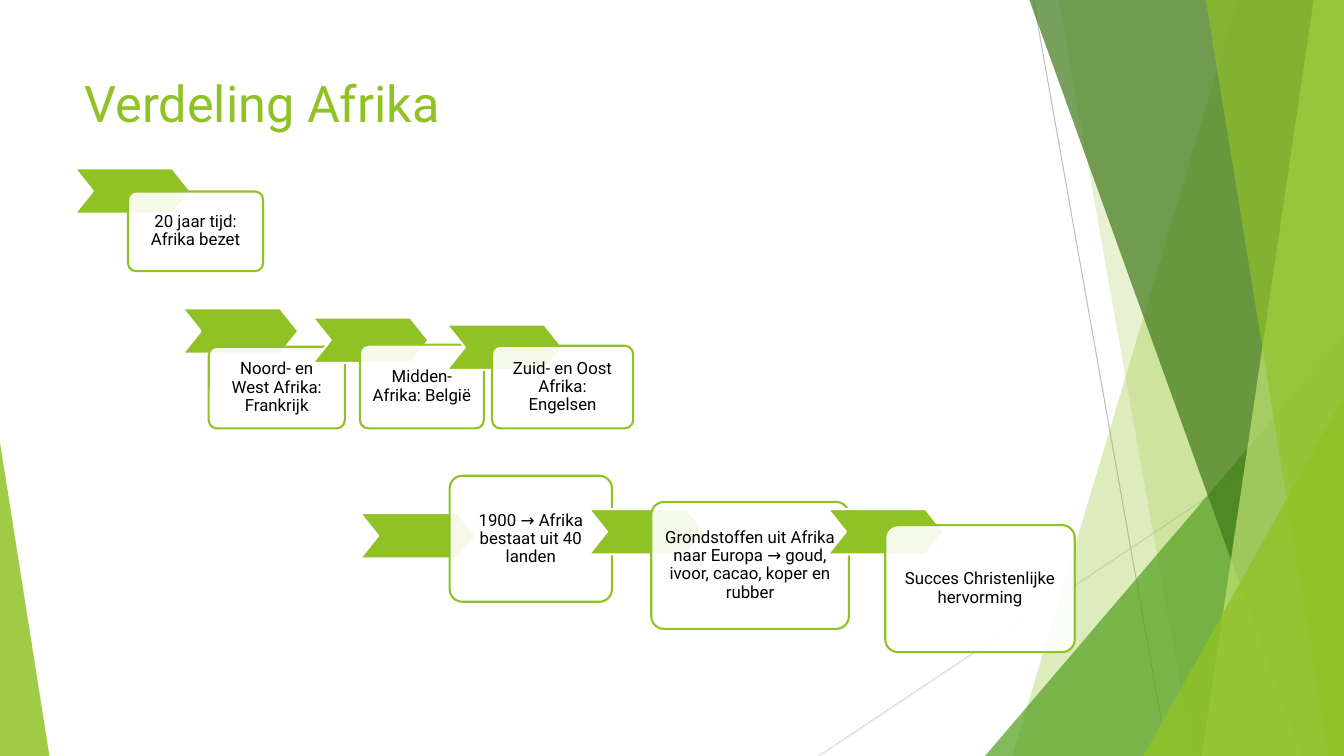
"""Build the slide 'Verdeling Afrika': chevron steps over green facets."""
from dataclasses import dataclass

from lxml import etree
from pptx import Presentation
from pptx.dml.color import RGBColor
from pptx.enum.shapes import MSO_CONNECTOR, MSO_SHAPE
from pptx.enum.text import MSO_ANCHOR, PP_ALIGN
from pptx.oxml.ns import qn
from pptx.util import Pt

STRAIGHT = MSO_CONNECTOR.STRAIGHT
TRIANGLE = MSO_SHAPE.ISOSCELES_TRIANGLE
CHEVRON = MSO_SHAPE.CHEVRON
ROUNDED = MSO_SHAPE.ROUNDED_RECTANGLE
TOP, MIDDLE = MSO_ANCHOR.TOP, MSO_ANCHOR.MIDDLE
LEFT, CENTER = PP_ALIGN.LEFT, PP_ALIGN.CENTER

PX = 9144
WIDTH, HEIGHT = 1333, 750


@dataclass(frozen=True)
class Theme:
    font: str = "Roboto"
    lime: str = "90C226"
    green: str = "54A021"
    forest: str = "3F7819"
    pale: str = "C0E474"
    white: str = "FFFFFF"
    black: str = "000000"
    gray: str = "BFBFBF"
    light_gray: str = "D9D9D9"
    title_size: int = 36
    step_size: int = 12
    outline: float = 1.5
    hairline: float = 0.75


THEME = Theme()


def paint(shape, color, opacity=100, outline=None):
    shape.shadow.inherit = False
    shape.fill.solid()
    shape.fill.fore_color.rgb = RGBColor.from_string(color)
    if opacity < 100:
        color_element = shape.fill._xPr.find(qn("a:solidFill"))[0]
        etree.SubElement(color_element, qn("a:alpha"), val=str(opacity * 1000))
    if outline:
        shape.line.color.rgb = RGBColor.from_string(outline)
        shape.line.width = Pt(THEME.outline)
    else:
        shape.line.fill.background()


def write(shape, text, size, color, alignment, anchor):
    frame = shape.text_frame
    frame.word_wrap = True
    frame.vertical_anchor = anchor
    paragraph = frame.paragraphs[0]
    paragraph.alignment = alignment
    run = paragraph.add_run()
    run.text = text
    run.font.name = THEME.font
    run.font.size = Pt(size)
    run.font.color.rgb = RGBColor.from_string(color)
    return frame


presentation = Presentation()
presentation.slide_width = WIDTH * PX
presentation.slide_height = HEIGHT * PX
slide = presentation.slides.add_slide(presentation.slide_layouts[6])
shapes = slide.shapes

hairlines = [
    (1025, 0, 1158, HEIGHT, THEME.gray),
    (WIDTH, 403, 812, HEIGHT, THEME.light_gray),
]
for *ends, color in hairlines:
    hairline = shapes.add_connector(STRAIGHT, *(end * PX for end in ends))
    hairline.line.color.rgb = RGBColor.from_string(color)
    hairline.line.width = Pt(THEME.hairline)
    etree.SubElement(hairline._element.spPr, qn("a:effectLst"))

# Bands give their left edge at top and bottom; triangles give left, top, width and apex.
facets = [
    ((1228, 1004), THEME.lime, 30),
    ((1050, 1183), THEME.lime, 20),
    ((977, 333, 356, 1), THEME.green, 72),
    ((1021, 1291), THEME.forest, 70),
    ((1303, 1192), THEME.pale, 70),
    ((1196, 1318), THEME.lime, 65),
    ((1134, 393, 199, 1), THEME.lime, 80),
    ((0, 439, 49, 0), THEME.lime, 85),
]
for geometry, color, opacity in facets:
    if len(geometry) == 2:
        top_x, bottom_x = geometry
        builder = shapes.build_freeform(top_x, 0, scale=PX)
        builder.add_line_segments([(WIDTH, 0), (WIDTH, HEIGHT), (bottom_x, HEIGHT)])
        facet = builder.convert_to_shape()
    else:
        left, top, width, apex = geometry
        facet = shapes.add_shape(
            TRIANGLE, left * PX, top * PX, width * PX, (HEIGHT - top) * PX)
        facet.adjustments[0] = apex
    paint(facet, color, opacity)

title = shapes.add_textbox(74 * PX, 67 * PX, 940 * PX, 144 * PX)
write(title, "Verdeling Afrika", THEME.title_size, THEME.lime, LEFT, TOP)

steps = [
    ((74, 167), (127, 190, 134, 79), "20 jaar tijd: Afrika bezet"),
    ((181, 306), (207, 344, 135, 81), "Noord- en West Afrika: Frankrijk"),
    ((310, 315), (357, 342, 123, 83), "Midden-Afrika: België"),
    ((443, 322), (488, 343, 140, 82), "Zuid- en Oost Afrika: Engelsen"),
    ((357, 509), (446, 472, 161, 125), "1900 → Afrika bestaat uit 40 landen"),
    ((584, 505), (646, 498, 196, 126),
     "Grondstoffen uit Afrika naar Europa → goud, ivoor, cacao, koper en rubber"),
    ((821, 505), (878, 521, 188, 126), "Succes Christenlijke hervorming"),
]
for (left, top), card_box, text in steps:
    chevron = shapes.add_shape(CHEVRON, left * PX, top * PX, 115 * PX, 45 * PX)
    chevron.adjustments[0] = 0.4
    paint(chevron, THEME.lime, outline=THEME.white)

    card = shapes.add_shape(ROUNDED, *(length * PX for length in card_box))
    card.adjustments[0] = 0.1
    paint(card, THEME.white, 90, THEME.lime)
    frame = write(card, text, THEME.step_size, THEME.black, CENTER, MIDDLE)
    frame.margin_left = frame.margin_right = 9 * PX
    frame.margin_top = frame.margin_bottom = 9 * PX
    frame.paragraphs[0].line_spacing = 0.9

presentation.save("out.pptx")
